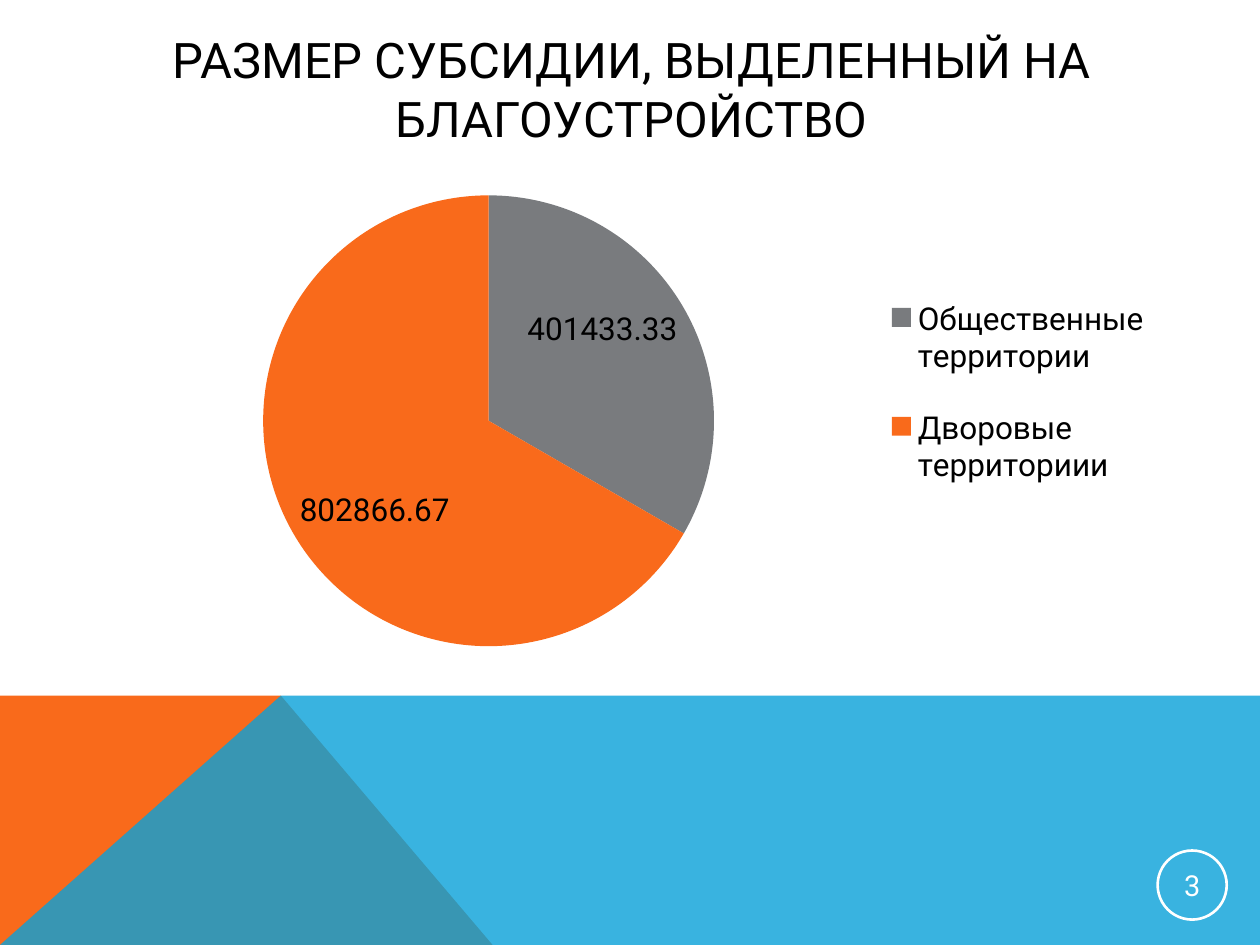
from lxml import etree
from pptx import Presentation
from pptx.chart.data import CategoryChartData
from pptx.dml.color import RGBColor
from pptx.enum import chart as ch, shapes, text
from pptx.oxml import parse_xml
from pptx.oxml.ns import nsdecls, qn
from pptx.util import Pt

FONT = "Roboto"
BLACK = RGBColor(0x00, 0x00, 0x00)
WHITE = RGBColor(0xFF, 0xFF, 0xFF)
ORANGE = RGBColor(0xF9, 0x6A, 0x1B)
BLUE = RGBColor(0x08, 0xA1, 0xD9)
GRAY = RGBColor(0x79, 0x7B, 0x7E)


def set_font(font, size, color):
    font.name, font.size, font.color.rgb = FONT, Pt(size), color


def set_layout(parent, x, y, w, h, inner=False):
    target = '<c:layoutTarget val="inner"/>' if inner else ""
    layout = parse_xml(
        f'<c:layout {nsdecls("c")}><c:manualLayout>{target}'
        '<c:xMode val="edge"/><c:yMode val="edge"/>'
        f'<c:x val="{x}"/><c:y val="{y}"/><c:w val="{w}"/><c:h val="{h}"/>'
        '</c:manualLayout></c:layout>')
    for old in parent.findall(qn("c:layout")):
        parent.remove(old)
    # The layout follows the legend position, or opens the plot area
    pos = parent.find(qn("c:legendPos"))
    parent.insert(0 if pos is None else parent.index(pos) + 1, layout)


prs = Presentation()
prs.slide_width, prs.slide_height = Pt(720), Pt(540)
s = prs.slides.add_slide(prs.slide_layouts[6])

# Bottom band: orange corner under a translucent blue sweep
top, peak = 397.5, 160.5
bands = [
    (ORANGE, [(0, 540), (0, top), (peak, top), (281.5, 540)]),
    (BLUE, [(0, 540), (peak, top), (720, top), (720, 540)]),
]
for color, points in bands:
    points = [(Pt(x), Pt(y)) for x, y in points]
    fb = s.shapes.build_freeform(*points[0])
    fb.add_line_segments(points[1:], close=True)
    sp = fb.convert_to_shape()
    sp.shadow.inherit = False
    sp.fill.solid()
    sp.fill.fore_color.rgb = color
    sp.line.fill.background()
clr = sp._element.spPr.find(qn("a:solidFill"))[0]
etree.SubElement(clr, qn("a:alpha"), val="80000")

# Title
tf = s.shapes.add_textbox(Pt(65), Pt(29), Pt(592), Pt(43)).text_frame
tf.word_wrap = True
tf.vertical_anchor = text.MSO_ANCHOR.MIDDLE
p = tf.paragraphs[0]
p.text = "РАЗМЕР СУБСИДИИ, ВЫДЕЛЕННЫЙ НА БЛАГОУСТРОЙСТВО"
p.alignment = text.PP_ALIGN.CENTER
set_font(p.font, 28, BLACK)

# Pie chart of the subsidy
data = CategoryChartData()
data.categories = ["Общественные территории", "Дворовые территориии"]
data.add_series("Series 1", [401433.33, 802866.67])
chart = s.shapes.add_chart(ch.XL_CHART_TYPE.PIE, Pt(92), Pt(88.5),
                           Pt(576), Pt(289.5), data).chart
set_font(chart.font, 18, BLACK)
chart.has_title = False
chart.has_legend = True
chart.legend.position = ch.XL_LEGEND_POSITION.RIGHT
chart.legend.include_in_layout = False
plot = chart.plots[0]
plot.vary_by_categories = True
for i, color in enumerate([GRAY, ORANGE]):
    fill = plot.series[0].points[i].format.fill
    fill.solid()
    fill.fore_color.rgb = color
plot.has_data_labels = True
labels = plot.data_labels
labels.show_value = True
labels.show_percentage = False
labels.position = ch.XL_LABEL_POSITION.INSIDE_END
set_font(labels.font, 18, BLACK)
set_layout(chart._chartSpace.chart.plotArea, 0.1, 0.08, 0.45, 0.89, inner=True)
set_layout(chart.legend._element, 0.71, 0.22, 0.28, 0.5)

# Slide number in a ring
sp = s.shapes.add_shape(shapes.MSO_SHAPE.OVAL, Pt(661.5), Pt(486), Pt(39.5), Pt(39.5))
sp.shadow.inherit = False
sp.fill.background()
sp.line.color.rgb = WHITE
sp.line.width = Pt(1.5)
tf = sp.text_frame
tf.margin_left = tf.margin_right = tf.margin_top = tf.margin_bottom = Pt(0.72)
tf.vertical_anchor = text.MSO_ANCHOR.MIDDLE
p = tf.paragraphs[0]
p.text = "3"
p.alignment = text.PP_ALIGN.CENTER
set_font(p.font, 16.5, WHITE)

prs.save("out.pptx")
